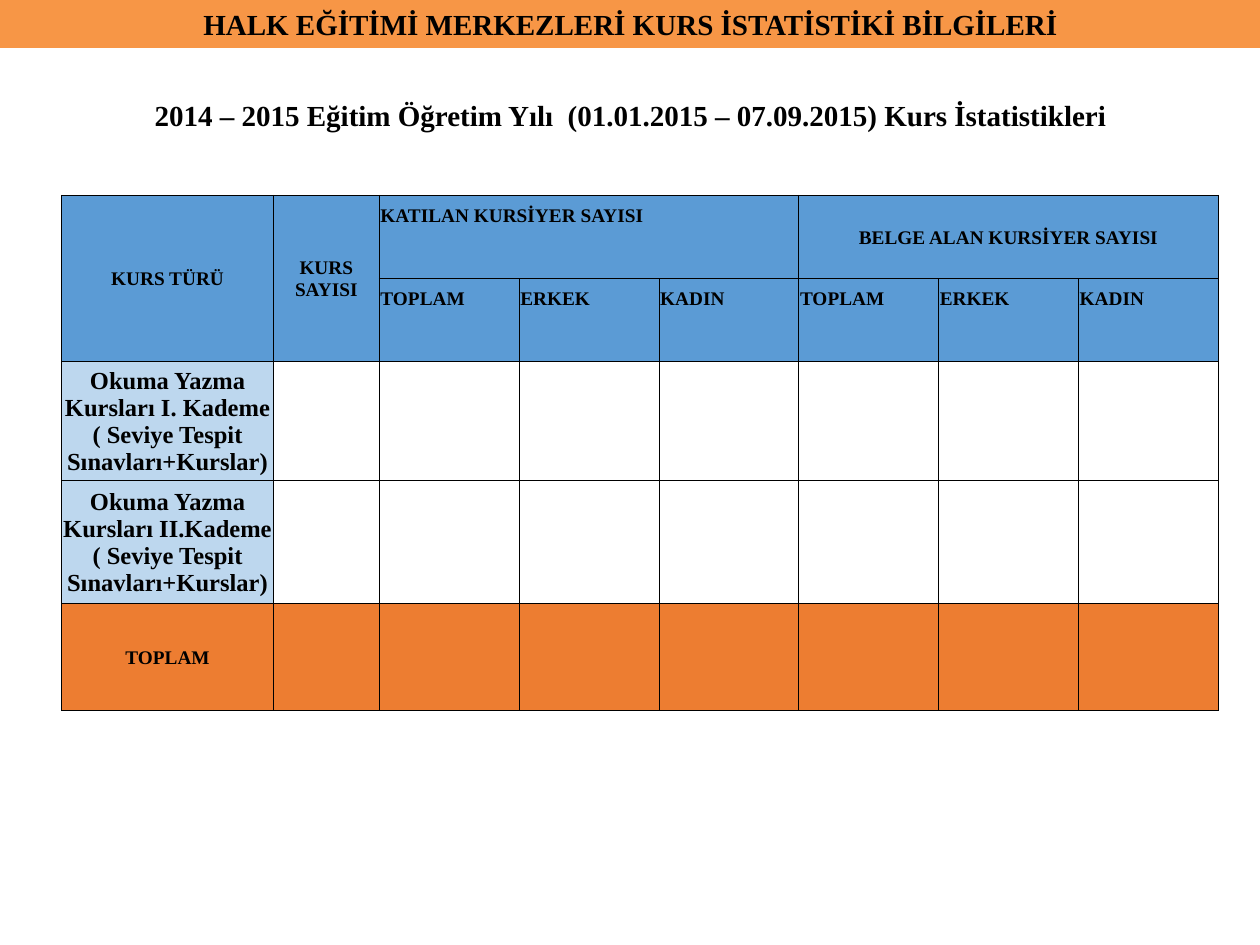
import pptx
import pptx.dml.color
import pptx.enum.text
import pptx.oxml
import pptx.oxml.ns
import pptx.util

Inches = pptx.util.Inches
RGBColor = pptx.dml.color.RGBColor
Align = pptx.enum.text.PP_ALIGN
Anchor = pptx.enum.text.MSO_ANCHOR

BLACK = RGBColor(0x00, 0x00, 0x00)
BANNER_ORANGE = RGBColor(0xF7, 0x96, 0x46)
HEADER_BLUE = RGBColor(0x5B, 0x9B, 0xD5)
LABEL_BLUE = RGBColor(0xBD, 0xD7, 0xEE)
TOTAL_ORANGE = RGBColor(0xED, 0x7D, 0x31)

WIDTH, HEIGHT = Inches(10), Inches(7.5)
COLUMN_WIDTHS = [1.68, 0.84] + [1.11] * 6
ROW_HEIGHTS = [0.66, 0.66, 0.94, 0.98, 0.85]
ROW_FILLS = [HEADER_BLUE, HEADER_BLUE, None, None, TOTAL_ORANGE]
GROUP_COLUMNS = ["TOPLAM", "ERKEK", "KADIN"]
MERGES = [((0, 0), (1, 0)), ((0, 1), (1, 1)), ((0, 2), (0, 4)), ((0, 5), (0, 7))]
ROWS = [
    ["KURS TÜRÜ", "KURS SAYISI", "KATILAN KURSİYER SAYISI", "", "",
     "BELGE ALAN KURSİYER SAYISI", "", ""],
    ["", ""] + GROUP_COLUMNS * 2,
    ["Okuma Yazma Kursları I. Kademe ( Seviye Tespit Sınavları+Kurslar)"] + [""] * 7,
    ["Okuma Yazma Kursları II.Kademe ( Seviye Tespit Sınavları+Kurslar)"] + [""] * 7,
    ["TOPLAM"] + [""] * 7,
]


def apply_values(target, values):
    """Set each named attribute of the target."""
    for name, value in values.items():
        setattr(target, name, value)


def write_text(frame, text, size, alignment=Align.CENTER):
    """Write one bold black paragraph."""
    frame.text = text
    paragraph = frame.paragraphs[0]
    paragraph.alignment = alignment
    font = paragraph.runs[0].font
    apply_values(font, {"name": "Times New Roman", "size": pptx.util.Pt(size), "bold": True})
    font.color.rgb = BLACK


def place_heading(shape, box, text):
    """Fit a one-line heading to its box."""
    apply_values(shape, dict(zip(("left", "top", "width", "height"), box)))
    apply_values(shape.text_frame, {
        "word_wrap": True,
        "auto_size": pptx.enum.text.MSO_AUTO_SIZE.NONE,
        "vertical_anchor": Anchor.MIDDLE,
    })
    write_text(shape.text_frame, text, 16.6)


def add_borders(cell):
    """Draw thin black lines on all four sides of a cell."""
    properties = cell._tc.get_or_add_tcPr()
    for side in "LRTB":
        properties.append(pptx.oxml.parse_xml(
            f'<a:ln{side} {pptx.oxml.ns.nsdecls("a")} w="6350"><a:solidFill>'
            f'<a:srgbClr val="{BLACK}"/></a:solidFill></a:ln{side}>'))


def format_cell(cell, row, column, text):
    """Give a cell its margins, borders, fill and text."""
    left_aligned = row == 1 and column > 1 or (row, column) == (0, 2)
    apply_values(cell, {
        "margin_left": Inches(0.01),
        "margin_right": Inches(0.01),
        "margin_top": Inches(0.08 if left_aligned else 0.01),
        "margin_bottom": 0,
        "vertical_anchor": Anchor.TOP if left_aligned else Anchor.MIDDLE,
    })
    add_borders(cell)
    color = LABEL_BLUE if row in (2, 3) and column == 0 else ROW_FILLS[row]
    if color is None:
        cell.fill.background()
    else:
        cell.fill.solid()
        cell.fill.fore_color.rgb = color
    if text:
        write_text(cell.text_frame, text, 14 if row in (2, 3) else 11,
                   Align.LEFT if left_aligned else Align.CENTER)


def add_course_table(slide, box):
    """Add the course statistics table."""
    table = slide.shapes.add_table(len(ROWS), len(COLUMN_WIDTHS), *box).table
    apply_values(table, {"first_row": False, "horz_banding": False})
    for column, width in zip(table.columns, COLUMN_WIDTHS):
        column.width = Inches(width)
    for row, height in zip(table.rows, ROW_HEIGHTS):
        row.height = Inches(height)
    for start, end in MERGES:
        table.cell(*start).merge(table.cell(*end))
    for row, texts in enumerate(ROWS):
        for column, text in enumerate(texts):
            format_cell(table.cell(row, column), row, column, text)


def build_slide(presentation):
    """Build the course statistics slide."""
    slide = presentation.slides.add_slide(presentation.slide_layouts[5])
    heading_height = Inches(0.38)
    title = slide.shapes.title
    place_heading(title, (0, 0, WIDTH, heading_height),
                  "HALK EĞİTİMİ MERKEZLERİ KURS İSTATİSTİKİ BİLGİLERİ")
    title.fill.solid()
    title.fill.fore_color.rgb = BANNER_ORANGE
    period_box = (0, Inches(0.72), WIDTH, heading_height)
    place_heading(slide.shapes.add_textbox(*period_box), period_box,
                  "2014 – 2015 Eğitim Öğretim Yılı  (01.01.2015 – 07.09.2015) Kurs İstatistikleri")
    add_course_table(slide, (Inches(0.49), Inches(1.55),
                             Inches(sum(COLUMN_WIDTHS)), Inches(sum(ROW_HEIGHTS))))


def main():
    """Create and save the presentation."""
    presentation = pptx.Presentation()
    apply_values(presentation, {"slide_width": WIDTH, "slide_height": HEIGHT})
    build_slide(presentation)
    presentation.save("out.pptx")


if __name__ == "__main__":
    main()
